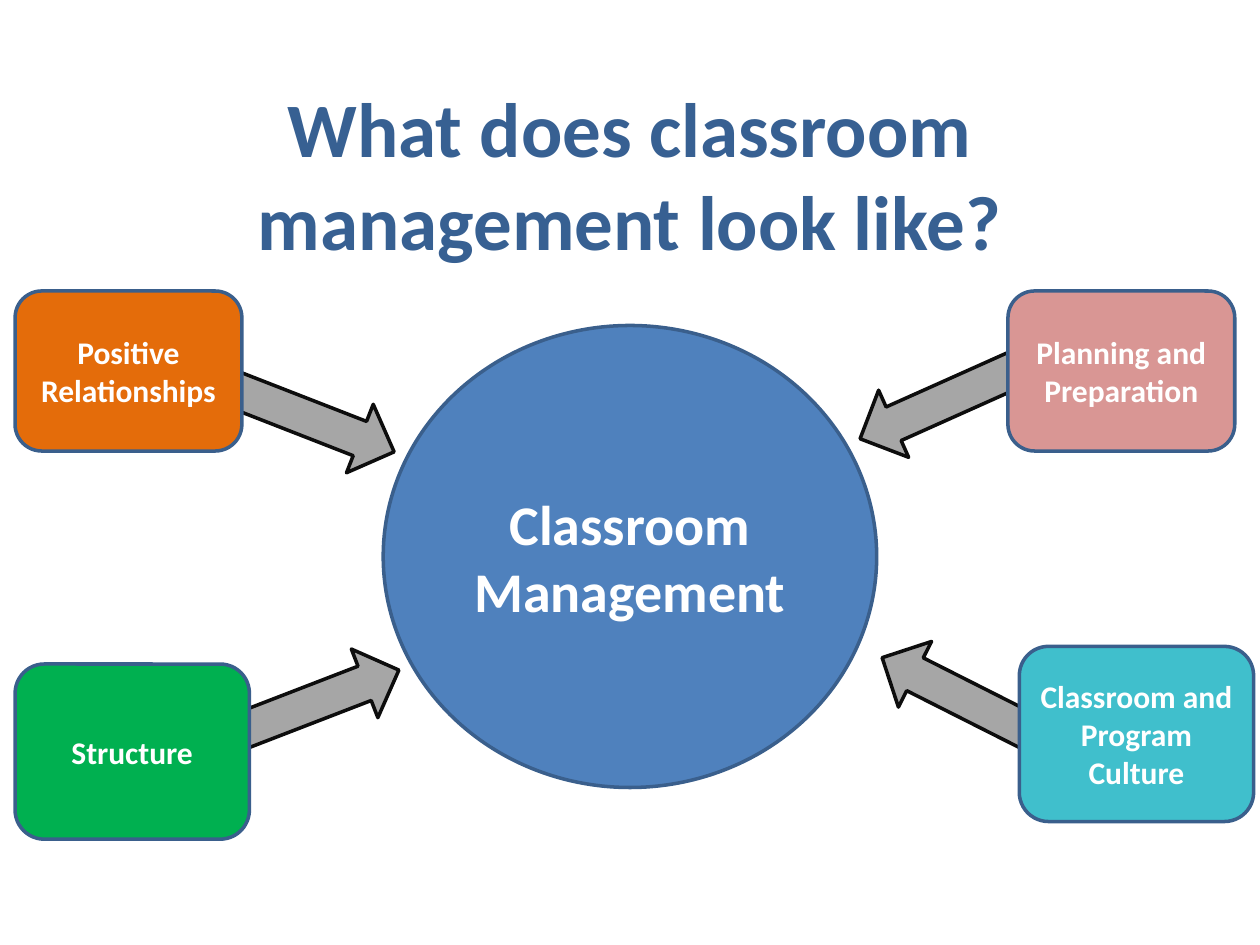
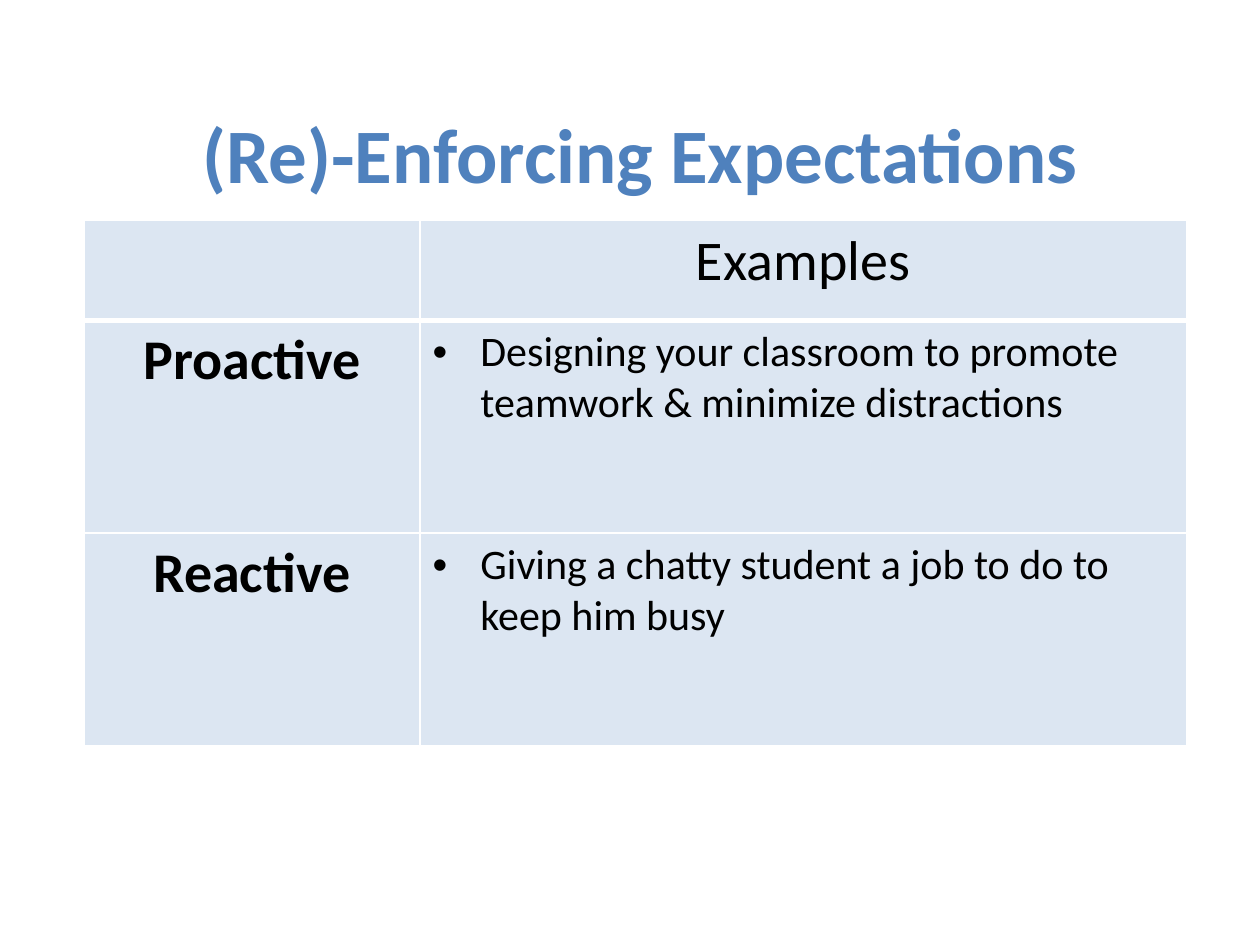
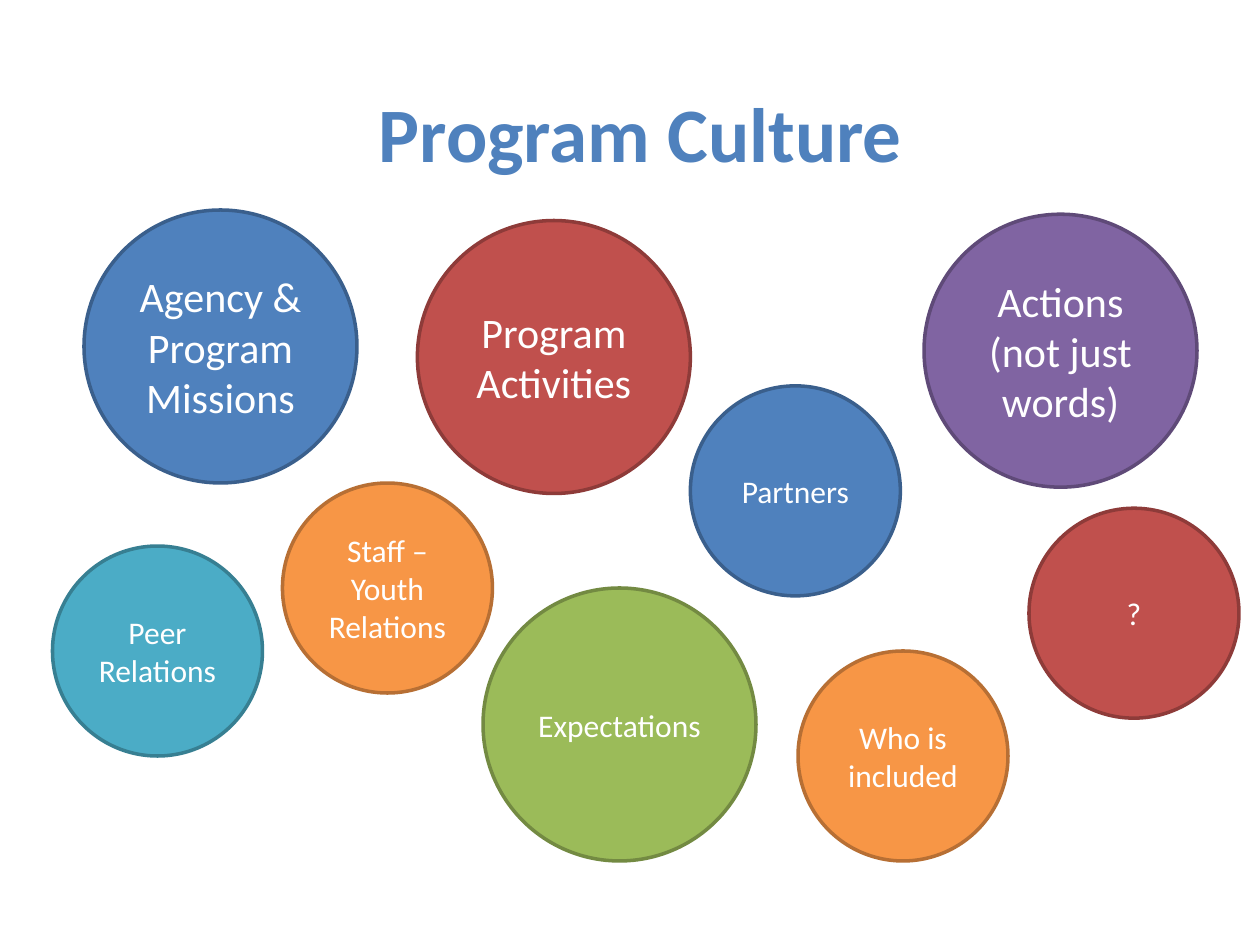
from dataclasses import dataclass

from lxml.etree import SubElement
from pptx import Presentation
from pptx.dml.color import RGBColor
from pptx.enum.shapes import MSO_SHAPE
from pptx.enum.text import MSO_ANCHOR, MSO_AUTO_SIZE, PP_ALIGN
from pptx.oxml.ns import qn
from pptx.util import Inches, Pt


@dataclass(frozen=True)
class Theme:
    font: str = "Calibri"
    white: str = "FFFFFF"
    black: str = "000000"
    title: str = "4F81BD"
    deep_title: str = "376092"
    blue: tuple = ("4F81BD", "3A5F8C")
    red: tuple = ("C0504D", "8E3B39")
    green: tuple = ("9BBB59", "738A42")
    purple: tuple = ("8064A2", "5F4A78")
    teal: tuple = ("4BACC6", "377F92")
    orange: tuple = ("F79646", "B76F34")
    arrow: tuple = ("A6A6A6", "0D0D0D")
    relationships: str = "E46C0A"
    structure: str = "00B050"
    culture: str = "40BFCC"
    planning: str = "D99694"
    cell: str = "DCE6F2"
    title_size: int = 44
    large: int = 32
    medium: int = 24
    small: int = 18
    outline: int = 2
    thin_border: int = 1
    thick_border: int = 3


THEME = Theme()
SLIDE_WIDTH, SLIDE_HEIGHT = Inches(10), Inches(7.5)
GRID_COLUMNS = 120
UNIT = SLIDE_WIDTH / GRID_COLUMNS
LARGE_CIRCLE, SMALL_CIRCLE = 26, 20
ARROW_THICKNESS = 7


def units(*counts):
    return [round(count * UNIT) for count in counts]


def format_text(text_frame, size, color, bold=False, alignment=PP_ALIGN.CENTER):
    for paragraph in text_frame.paragraphs:
        paragraph.alignment = alignment
        font = paragraph.font
        font.name = THEME.font
        font.size = Pt(size)
        font.bold = bold
        font.color.rgb = RGBColor.from_string(color)


def add_titled_slide(presentation, text, top, left=7, color=THEME.title):
    slide = presentation.slides.add_slide(presentation.slide_layouts[5])
    title = slide.shapes.title
    title.left, title.top, title.width, title.height = units(left, top, 108, 15)
    frame = title.text_frame
    frame.text = text
    frame.word_wrap = True
    frame.auto_size = MSO_AUTO_SIZE.NONE
    frame.vertical_anchor = MSO_ANCHOR.MIDDLE
    format_text(frame, THEME.title_size, color, bold=True)
    return slide


def add_filled_shape(slide, kind, place, colors):
    shape = slide.shapes.add_shape(kind, *units(*place))
    shape.shadow.inherit = False
    fill, outline = colors
    shape.fill.solid()
    shape.fill.fore_color.rgb = RGBColor.from_string(fill)
    shape.line.color.rgb = RGBColor.from_string(outline)
    shape.line.width = Pt(THEME.outline)
    return shape


def add_labelled_shape(slide, kind, place, colors, text, size, bold=False):
    frame = add_filled_shape(slide, kind, place, colors).text_frame
    frame.text = text
    frame.word_wrap = True
    frame.vertical_anchor = MSO_ANCHOR.MIDDLE
    format_text(frame, size, THEME.white, bold)


def add_arrow(slide, center_x, center_y, length, angle):
    place = (center_x - length / 2, center_y - ARROW_THICKNESS / 2, length, ARROW_THICKNESS)
    add_filled_shape(slide, MSO_SHAPE.LEFT_ARROW, place, THEME.arrow).rotation = angle


def add_bullet(paragraph):
    properties = paragraph._p.get_or_add_pPr()
    indent = Inches(0.38)
    properties.set("marL", str(indent))
    properties.set("indent", str(-indent))
    SubElement(properties, qn("a:buFont"), typeface="Arial")
    SubElement(properties, qn("a:buChar"), char="•")


def add_borders(cell, bottom_width):
    properties = cell._tc.get_or_add_tcPr()
    widths = dict.fromkeys(("lnL", "lnR", "lnT"), THEME.thin_border)
    widths["lnB"] = bottom_width
    for position, (side, width) in enumerate(widths.items()):
        line = SubElement(properties, qn(f"a:{side}"), w=str(Pt(width)))
        SubElement(SubElement(line, qn("a:solidFill")), qn("a:srgbClr"), val=THEME.white)
        properties.insert(position, line)


def add_examples_table(slide, place, column_widths, row_heights, rows):
    table = slide.shapes.add_table(len(rows), len(column_widths), *units(*place)).table
    table.first_row = table.horz_banding = False
    for column, width in zip(table.columns, units(*column_widths)):
        column.width = width
    for row, height in zip(table.rows, units(*row_heights)):
        row.height = height
    for row_index, texts in enumerate(rows):
        for column_index, text in enumerate(texts):
            cell = table.cell(row_index, column_index)
            cell.fill.solid()
            cell.fill.fore_color.rgb = RGBColor.from_string(THEME.cell)
            add_borders(cell, THEME.thin_border if row_index else THEME.thick_border)
            cell.text = text
            if row_index and column_index:
                add_bullet(cell.text_frame.paragraphs[0])
                format_text(cell.text_frame, THEME.medium, THEME.black, alignment=PP_ALIGN.LEFT)
            else:
                format_text(cell.text_frame, THEME.large, THEME.black, bold=row_index > 0)


def build_management_slide(presentation):
    slide = add_titled_slide(presentation, "What does classroom management look like?",
                             top=9, left=6, color=THEME.deep_title)
    add_labelled_shape(slide, MSO_SHAPE.OVAL, (36.5, 31, 47, 44), THEME.blue,
                       "Classroom Management", THEME.large, bold=True)
    for arrow in ((28.92, 67.32, 19.44, 158.9), (91.14, 66.24, 15.96, 26.8),
                  (90.3, 38.04, 18.36, 335.9), (29.04, 39.72, 18.24, 201.3)):
        add_arrow(slide, *arrow)
    upper_card, lower_card = (21.6, 15.24), (22.32, 16.68)
    cards = (
        ("Positive Relationships", 1.44, 27.72, upper_card, THEME.relationships),
        ("Structure", 1.44, 63.24, lower_card, THEME.structure),
        ("Classroom and Program Culture", 97.08, 61.56, lower_card, THEME.culture),
        ("Planning and Preparation", 96, 27.72, upper_card, THEME.planning),
    )
    for text, left, top, card_size, fill in cards:
        add_labelled_shape(slide, MSO_SHAPE.ROUNDED_RECTANGLE, (left, top, *card_size),
                           (fill, THEME.blue[1]), text, THEME.small, bold=True)


def build_expectations_slide(presentation):
    slide = add_titled_slide(presentation, "(Re)-Enforcing Expectations", top=7)
    add_examples_table(slide, (8, 21, 105, 50), (32, 73), (9.5, 20.25, 20.25), (
        ("", "Examples"),
        ("Proactive", "Designing your classroom to promote teamwork & minimize distractions"),
        ("Reactive", "Giving a chatty student a job to do to keep him busy"),
    ))


def build_culture_slide(presentation):
    slide = add_titled_slide(presentation, "Program Culture", top=5)
    circles = (
        ("Agency & Program Missions", 8, 20, LARGE_CIRCLE, THEME.blue, THEME.medium),
        ("?", 98, 48.4, SMALL_CIRCLE, THEME.red, THEME.small),
        ("Actions\n(not just words)", 88, 20.4, LARGE_CIRCLE, THEME.purple, THEME.medium),
        ("Expectations", 46, 56, LARGE_CIRCLE, THEME.green, THEME.small),
        ("Partners", 65.75, 36.75, SMALL_CIRCLE, THEME.blue, THEME.small),
        ("Who is included", 76, 62, SMALL_CIRCLE, THEME.orange, THEME.small),
        ("Program Activities", 39.75, 21, LARGE_CIRCLE, THEME.red, THEME.medium),
        ("Peer Relations", 5, 52, SMALL_CIRCLE, THEME.teal, THEME.small),
        ("Staff – Youth Relations", 26.9, 46, SMALL_CIRCLE, THEME.orange, THEME.small),
    )
    for text, left, top, diameter, colors, size in circles:
        add_labelled_shape(slide, MSO_SHAPE.OVAL, (left, top, diameter, diameter), colors, text, size)


def main():
    presentation = Presentation()
    presentation.slide_width, presentation.slide_height = SLIDE_WIDTH, SLIDE_HEIGHT
    build_management_slide(presentation)
    build_expectations_slide(presentation)
    build_culture_slide(presentation)
    presentation.save("out.pptx")


if __name__ == "__main__":
    main()
